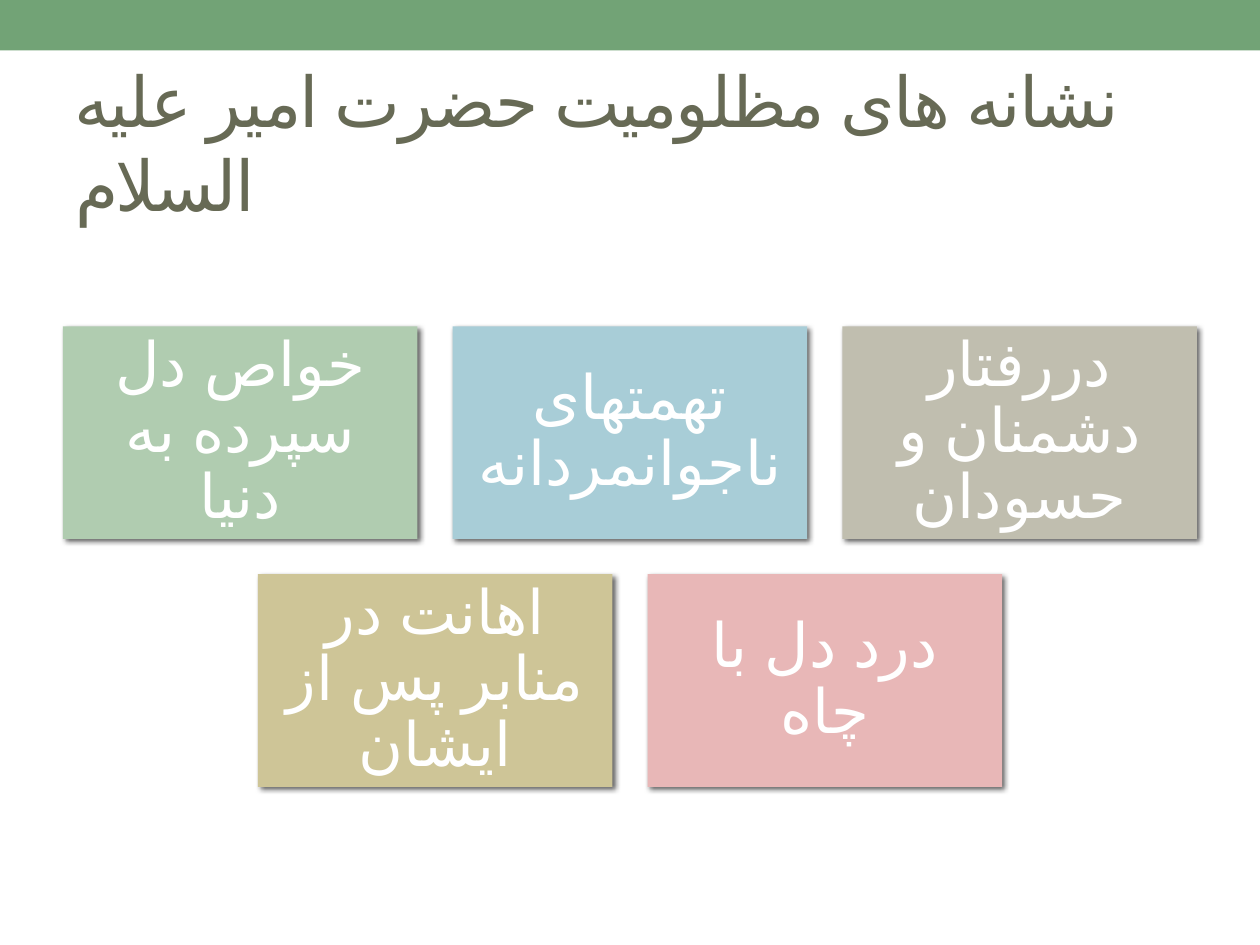
from lxml.etree import SubElement
from pptx import Presentation
from pptx.dml.color import RGBColor
from pptx.enum.shapes import MSO_SHAPE as Shape
from pptx.enum.text import MSO_ANCHOR as Anchor, MSO_AUTO_SIZE as AutoSize, PP_ALIGN as Align
from pptx.oxml.ns import qn
from pptx.util import Inches, Pt

# Content: rows of tiles, each a text and a colour name
TITLE = "نشانه های مظلومیت حضرت امیر علیه السلام"
TILE_ROWS = [
    [("خواص دل سپرده به دنیا", "green"),
     ("تهمتهای ناجوانمردانه", "blue"),
     ("دررفتار دشمنان و حسودان", "stone")],
    [("اهانت در منابر پس از ایشان", "sand"),
     ("درد دل با چاه", "rose")],
]
COLORS = {
    "bar": "72A376", "title": "676A55", "text": "FFFFFF", "shadow": "000000",
    "green": "B0CCB0", "blue": "A8CDD7", "stone": "C0BEAF",
    "sand": "CEC597", "rose": "E8B7B7",
}
FONT, LANGUAGE = "Arial", "fa-IR"

# Grid in inches: three columns between the margins, rows centred
SLIDE_WIDTH, SLIDE_HEIGHT = 10, 7.5
MARGIN, GRID_TOP, GAP, COLUMNS = 0.5, 2.59, 0.28, 3
TILE_WIDTH = (SLIDE_WIDTH - 2 * MARGIN - (COLUMNS - 1) * GAP) / COLUMNS
TILE_HEIGHT = TILE_WIDTH * 0.6


def add_box(slide, left, top, width, height, color):
    shape = slide.shapes.add_shape(
        Shape.RECTANGLE, Inches(left), Inches(top), Inches(width), Inches(height))
    shape.shadow.inherit = False
    shape.fill.solid()
    shape.fill.fore_color.rgb = RGBColor.from_string(COLORS[color])
    shape.line.fill.background()
    return shape


def add_shadow(shape):
    effects = shape.fill._xPr.find(qn("a:effectLst"))
    shadow = SubElement(effects, qn("a:outerShdw"), blurRad=str(Pt(3)),
                        dist=str(Pt(2)), dir=str(45 * 60000), rotWithShape="0")
    color = SubElement(shadow, qn("a:srgbClr"), val=COLORS["shadow"])
    SubElement(color, qn("a:alpha"), val="60000")


def write_text(shape, text, size, color, align):
    frame = shape.text_frame
    frame.word_wrap = True
    frame.auto_size = AutoSize.NONE
    frame.vertical_anchor = Anchor.MIDDLE
    paragraph = frame.paragraphs[0]
    paragraph.alignment = align
    run = paragraph.add_run()
    run.text = text
    run.font.name = FONT
    run.font.size = Pt(size)
    run.font.color.rgb = RGBColor.from_string(COLORS[color])
    # Persian letters take the complex-script font and language
    properties = run.font._element
    properties.set("lang", LANGUAGE)
    SubElement(properties, qn("a:cs"), typeface=FONT)
    return frame, paragraph, run


def add_tile(slide, left, top, text, color):
    tile = add_box(slide, left, top, TILE_WIDTH, TILE_HEIGHT, color)
    add_shadow(tile)
    frame, paragraph, _ = write_text(tile, text, 35, "text", Align.CENTER)
    frame.margin_left = frame.margin_right = Inches(0.15)
    frame.margin_top = frame.margin_bottom = Inches(0.15)
    paragraph.line_spacing = 0.9


def main():
    presentation = Presentation()
    presentation.slide_width = Inches(SLIDE_WIDTH)
    presentation.slide_height = Inches(SLIDE_HEIGHT)
    slide = presentation.slides.add_slide(presentation.slide_layouts[5])

    # Top bar
    add_box(slide, 0, 0, SLIDE_WIDTH, 0.4, "bar")

    # Title
    title = slide.shapes.title
    title.left, title.top = Inches(MARGIN), Inches(0.58)
    title.width, title.height = Inches(SLIDE_WIDTH - 2 * MARGIN), Inches(1.08)
    _, _, run = write_text(title, TITLE, 40, "title", Align.LEFT)
    run.font._element.set("spc", "-100")

    # Tiles
    for row, tiles in enumerate(TILE_ROWS):
        row_width = len(tiles) * (TILE_WIDTH + GAP) - GAP
        row_left = (SLIDE_WIDTH - row_width) / 2
        top = GRID_TOP + row * (TILE_HEIGHT + GAP)
        for column, (text, color) in enumerate(tiles):
            add_tile(slide, row_left + column * (TILE_WIDTH + GAP), top, text, color)

    presentation.save("out.pptx")


if __name__ == "__main__":
    main()
